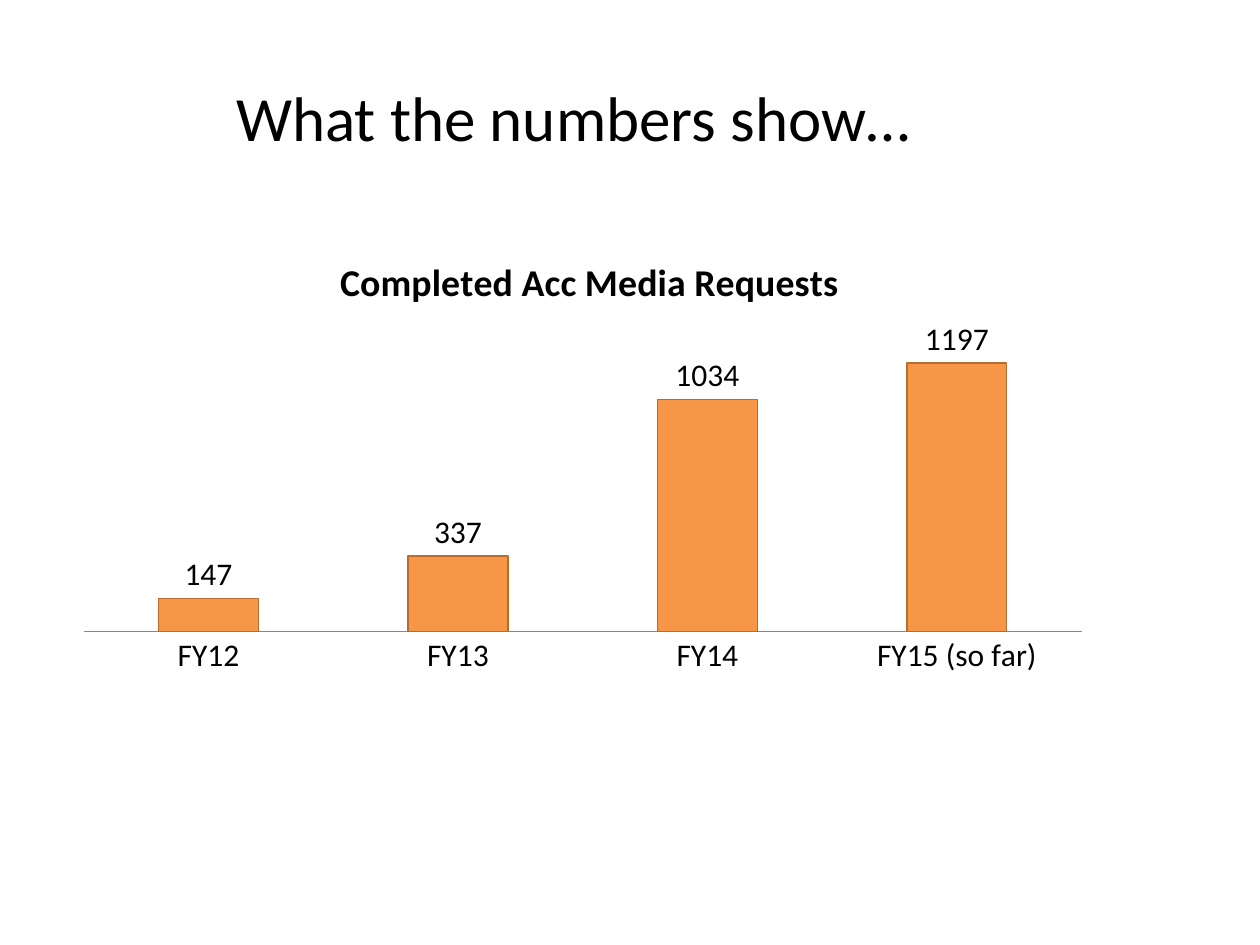
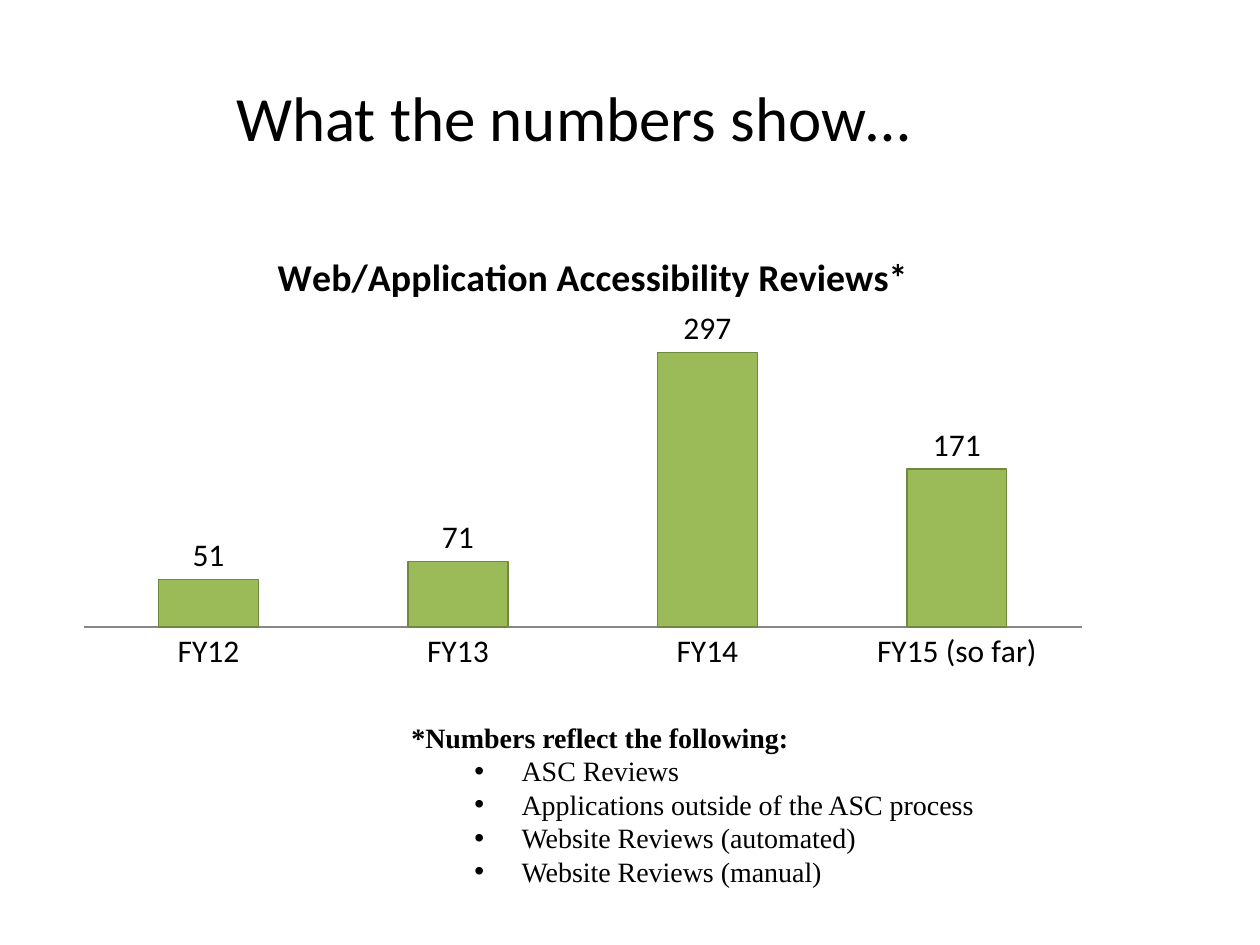
from dataclasses import dataclass

from lxml import etree
from pptx import Presentation
from pptx.chart.data import CategoryChartData
from pptx.dml.color import RGBColor
from pptx.enum.chart import XL_CHART_TYPE, XL_LABEL_POSITION, XL_TICK_MARK
from pptx.enum.text import MSO_ANCHOR, MSO_AUTO_SIZE, PP_ALIGN
from pptx.oxml.ns import qn
from pptx.util import Pt

COLUMNS = XL_CHART_TYPE.COLUMN_CLUSTERED
OUTSIDE = XL_LABEL_POSITION.OUTSIDE_END
NO_TICK = XL_TICK_MARK.NONE
MIDDLE, TOP = MSO_ANCHOR.MIDDLE, MSO_ANCHOR.TOP
CENTER, LEFT = PP_ALIGN.CENTER, PP_ALIGN.LEFT
GROW, FIXED = MSO_AUTO_SIZE.SHAPE_TO_FIT_TEXT, MSO_AUTO_SIZE.NONE

SANS, SERIF = "Calibri", "Times New Roman"
BLACK, GRAY = "000000", "878787"
HEADING = "What the numbers show…"
YEARS = ["FY12", "FY13", "FY14", "FY15 (so far)"]


@dataclass(frozen=True)
class Report:
    title: str
    series: str
    counts: tuple[int, ...]
    top: int
    fill: str
    edge: str
    head: tuple[float, float]
    plot: tuple[float, float, float, float]
    note: str = ""
    items: tuple[str, ...] = ()


REPORTS = [
    Report("Completed Acc Media Requests", "Completed Acc Media Requests",
           (147, 337, 1034, 1197), 1400, "F79646", "B66D31",
           (0.26, 0.06), (0.02, 0.21, 0.96, 0.68)),
    Report("Web/Application Accessibility Reviews*", "Series 1",
           (51, 71, 297, 171), 350, "9BBB59", "71893F",
           (0.2, 0.05), (0.02, 0.18, 0.96, 0.7),
           "*Numbers reflect the following:",
           ("ASC Reviews", "Applications outside of the ASC process",
            "Website Reviews (automated)", "Website Reviews (manual)")),
]


def color(code: str) -> RGBColor:
    return RGBColor.from_string(code)


def style(font, size: float, face: str = SANS, bold: bool = False) -> None:
    font.name, font.size, font.bold = face, Pt(size), bold
    font.color.rgb = color(BLACK)


def bullet(para) -> None:
    """Give a paragraph a round bullet with a hanging indent."""
    props = para._p.get_or_add_pPr()
    props.set("marL", str(Pt(63)))
    props.set("indent", str(Pt(-27)))
    etree.SubElement(props, qn("a:buFont")).set("typeface", "Arial")
    etree.SubElement(props, qn("a:buChar")).set("char", "•")


def write(slide, text: str, *, box: tuple, size: float, face: str = SANS,
          bold: bool = False, align=LEFT, anchor=TOP, fit=FIXED,
          items: tuple[str, ...] = ()) -> None:
    """Add a text box with a lead line and, below it, bulleted items."""
    frame = slide.shapes.add_textbox(*map(Pt, box)).text_frame
    frame.word_wrap, frame.auto_size = True, fit
    frame.vertical_anchor = anchor
    lead = frame.paragraphs[0]
    lead.text, lead.alignment = text, align
    style(lead.font, size, face, bold)
    for item in items:
        para = frame.add_paragraph()
        para.text, para.level = item, 1
        bullet(para)
        style(para.font, size, face)


def place(owner, spot: tuple[float, ...], index: int) -> None:
    """Set a manual layout, in fractions of the chart, on a chart part."""
    for old in owner.findall(qn("c:layout")):
        owner.remove(old)
    layout = etree.Element(qn("c:layout"))
    manual = etree.SubElement(layout, qn("c:manualLayout"))
    rules = [("xMode", "edge"), ("yMode", "edge"), *zip("xywh", spot)]
    if len(spot) == 4:
        rules.insert(0, ("layoutTarget", "inner"))
    for tag, value in rules:
        etree.SubElement(manual, qn(f"c:{tag}")).set("val", str(value))
    owner.insert(index, layout)


def draw_chart(slide, report: Report) -> None:
    data = CategoryChartData()
    data.categories = YEARS
    data.add_series(report.series, report.counts)
    box = map(Pt, (36, 126, 594, 264))
    chart = slide.shapes.add_chart(COLUMNS, *box, data).chart
    style(chart.font, 18)
    chart.has_legend = False
    chart.has_title = True
    head = chart.chart_title.text_frame
    head.text = report.title
    style(head.paragraphs[0].font, 21.6, bold=True)
    place(chart.element.find(f".//{qn('c:title')}"), report.head, 1)
    place(chart.element.find(f".//{qn('c:plotArea')}"), report.plot, 0)

    years, scale = chart.category_axis, chart.value_axis
    years.major_tick_mark = years.minor_tick_mark = NO_TICK
    years.format.line.color.rgb = color(GRAY)
    years.format.line.width = Pt(0.75)
    scale.minimum_scale, scale.maximum_scale = 0, report.top
    scale.has_major_gridlines = False
    scale.visible = False

    plot = chart.plots[0]
    plot.gap_width, plot.overlap = 150, -25
    plot.vary_by_categories = False
    plot.has_data_labels = True
    labels = plot.data_labels
    labels.show_value, labels.position = True, OUTSIDE
    style(labels.font, 18)
    bars = plot.series[0].format
    bars.fill.solid()
    bars.fill.fore_color.rgb = color(report.fill)
    bars.line.color.rgb = color(report.edge)
    bars.line.width = Pt(0.75)


def main() -> None:
    deck = Presentation()
    deck.slide_width, deck.slide_height = Pt(720), Pt(540)
    for report in REPORTS:
        slide = deck.slides.add_slide(deck.slide_layouts[6])
        write(slide, HEADING, box=(36, 21.6, 583.2, 90), size=36,
              align=CENTER, anchor=MIDDLE)
        draw_chart(slide, report)
        if report.note:
            write(slide, report.note, box=(228, 408, 474, 104.4), size=16,
                  face=SERIF, bold=True, fit=GROW, items=report.items)
    deck.save("out.pptx")


if __name__ == "__main__":
    main()
